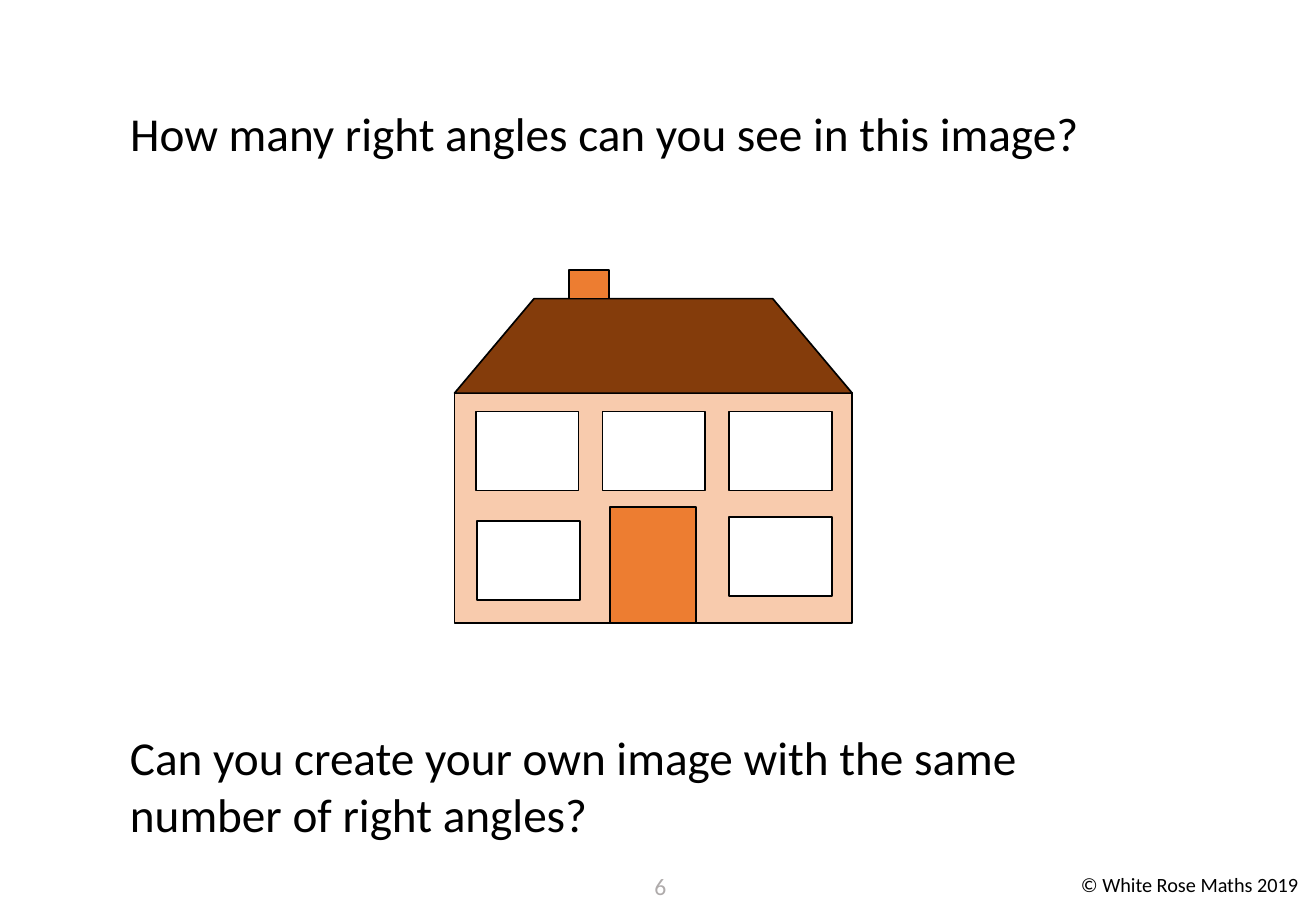
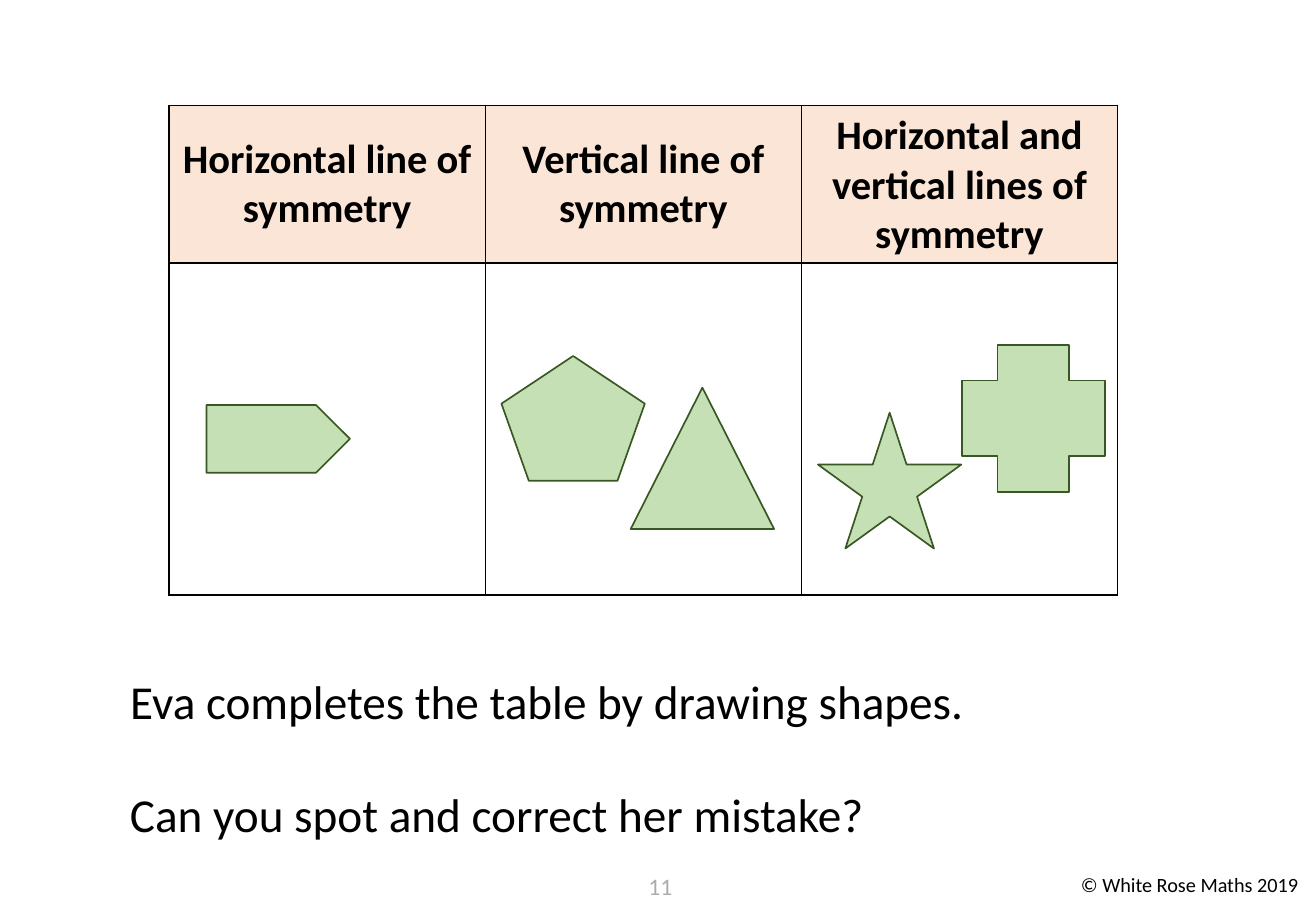
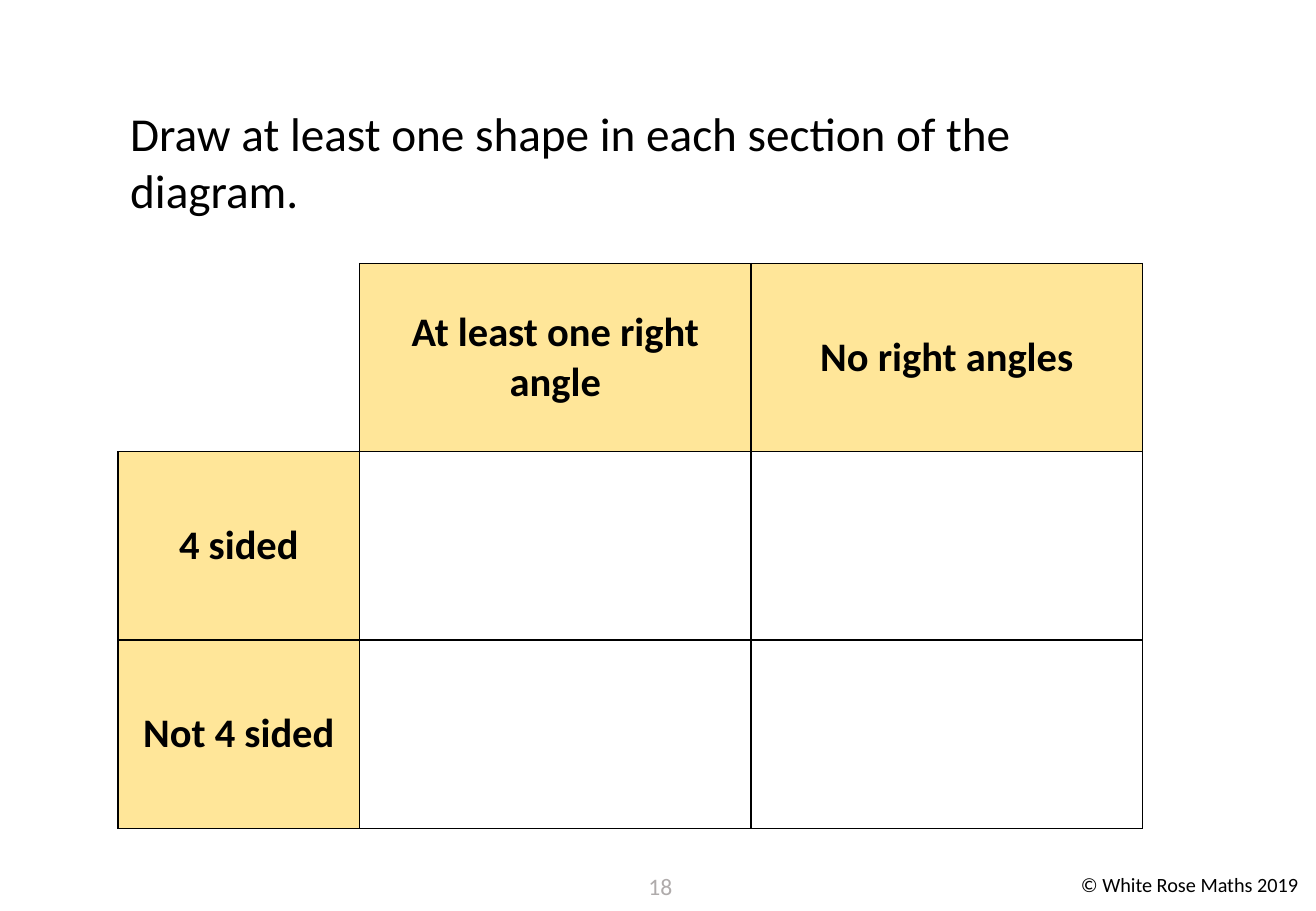
from lxml import etree
from pptx import Presentation
from pptx.dml.color import RGBColor
from pptx.enum import shapes, text
from pptx.oxml import ns
from pptx.util import Pt

COLOURS = {
    "ink": "000000", "paper": "FFFFFF", "number": "AFABAB",
    "wall": "F8CBAD", "roof": "843C0B", "brick": "ED7D31",
    "leaf": "C5E0B4", "leaf_edge": "385723",
    "peach": "FBE5D6", "yellow": "FFE699",
}
FONT = "Calibri"
PLAIN_TABLE = "{2D5ABB26-0587-4C30-8999-92F81FD0307C}"
SHAPE = shapes.MSO_SHAPE
ALIGN = text.PP_ALIGN
TEXT_LEFT, TEXT_TOP, TEXT_WIDTH, LINE_PITCH = 70, 58.3, 634, 33.63


def colour(name):
    return RGBColor.from_string(COLOURS[name])


def points(*lengths):
    return [Pt(length) for length in lengths]


def write(frame, words, size, align=ALIGN.LEFT, ink="ink", bold=False):
    frame.text = words
    for paragraph in frame.paragraphs:
        paragraph.alignment = align
        font = paragraph.font
        font.name, font.size, font.bold = FONT, Pt(size), bold
        font.color.rgb = colour(ink)


def add_label(slide, words, box, size, **style):
    label = slide.shapes.add_textbox(*points(*box))
    label.text_frame.word_wrap = True
    write(label.text_frame, words, size, **style)
    return label


def prompt_box(line, line_count):
    return (TEXT_LEFT, TEXT_TOP + line * LINE_PITCH,
            TEXT_WIDTH, line_count * LINE_PITCH + 7.2)


def add_prompt(slide, words, line, line_count=1):
    add_label(slide, words, prompt_box(line, line_count), 28)


def add_slide(deck, number, title, line=0, line_count=1):
    slide = deck.slides.add_slide(deck.slide_layouts[5])
    heading = slide.shapes.title
    heading.left, heading.top, heading.width, heading.height = points(
        *prompt_box(line, line_count))
    frame = heading.text_frame
    frame.auto_size = text.MSO_AUTO_SIZE.NONE
    frame.vertical_anchor = text.MSO_ANCHOR.TOP
    write(frame, title, 28)
    add_label(slide, str(number), (373, 513.4, 36.7, 28.8), 14,
              align=ALIGN.CENTER, ink="number")
    return slide


def share_copyright(slide):
    notice = add_label(slide, "© White Rose Maths 2019", (633.6, 513.4, 146, 21.6), 12)
    slide.slide_layout.shapes.element.append(notice.element)


def add_figure(parent, preset, box, fill, edge="ink"):
    figure = parent.shapes.add_shape(preset, *points(*box))
    figure.shadow.inherit = False
    figure.fill.solid()
    figure.fill.fore_color.rgb = colour(fill)
    figure.line.color.rgb = colour(edge)
    figure.line.width = Pt(1)
    return figure


def set_borders(cell, sides):
    properties = cell._tc.get_or_add_tcPr()
    for side in sides:
        border = etree.SubElement(properties, ns.qn(f"a:ln{side}"), w=str(Pt(1)))
        fill = etree.SubElement(border, ns.qn("a:solidFill"))
        etree.SubElement(fill, ns.qn("a:srgbClr"), val=COLOURS["ink"])


def add_grid(slide, corner, widths, heights, rows, heading_fill):
    frame = slide.shapes.add_table(
        len(heights), len(widths), *points(*corner, sum(widths), sum(heights)))
    grid = frame.table
    grid.first_row = grid.horz_banding = False
    grid._tbl.tblPr.find(ns.qn("a:tableStyleId")).text = PLAIN_TABLE
    for column, width in zip(grid.columns, widths):
        column.width = Pt(width)
    for row, height in zip(grid.rows, heights):
        row.height = Pt(height)
    for r, row in enumerate(rows):
        for c, words in enumerate(row):
            cell = grid.cell(r, c)
            blank_corner = r == c == 0 and not words
            set_borders(cell, "RB" if blank_corner else "LRTB")
            cell.fill.solid()
            cell.fill.fore_color.rgb = colour(heading_fill if words else "paper")
            if words:
                cell.vertical_anchor = text.MSO_ANCHOR.MIDDLE
                write(cell.text_frame, words, 24, ALIGN.CENTER, bold=True)


def add_house(slide):
    house = slide.shapes.add_group_shape()
    left, width, eaves = 269.4, 235.7, 233
    add_figure(house, SHAPE.RECTANGLE, (left, eaves, width, 136.2), "wall")
    roof = add_figure(house, SHAPE.FLOWCHART_MANUAL_OPERATION,
                      (left, 177, width, eaves - 177), "roof")
    roof.rotation = 180
    add_figure(house, SHAPE.RECTANGLE, (361.4, 300.4, 51.2, 68.8), "brick")
    add_figure(house, SHAPE.RECTANGLE, (337.2, 160, 23.8, 17), "brick")
    upper = [(282.2 + 75 * column, 244) for column in range(3)]
    lower = [(282.8, 308.8), (432.2, 306.4)]
    for corner in upper + lower:
        add_figure(house, SHAPE.RECTANGLE, (*corner, 60.8, 46.8), "paper")


def add_symmetry_shapes(slide):
    for preset, left, top, height in (
        (SHAPE.PENTAGON, 122.4, 240.1, 40.1),
        (SHAPE.REGULAR_PENTAGON, 297.2, 211, 74),
        (SHAPE.ISOSCELES_TRIANGLE, 373.8, 229.8, 83.8),
        (SHAPE.STAR_5_POINT, 484.8, 244.6, 80.6),
        (SHAPE.CROSS, 570, 204.4, 87.2),
    ):
        add_figure(slide, preset, (left, top, 85, height), "leaf", "leaf_edge")


def main():
    deck = Presentation()
    deck.slide_width, deck.slide_height = points(780, 540)

    slide = add_slide(deck, 6, "How many right angles can you see in this image?")
    share_copyright(slide)
    add_prompt(slide, "Can you create your own image with the same number of right angles?",
               line=11, line_count=2)
    add_house(slide)

    slide = add_slide(deck, 11, "Eva completes the table by drawing shapes.", line=10)
    add_prompt(slide, "Can you spot and correct her mistake?", line=12)
    add_grid(slide, (100.2, 62.4), [187.4] * 3, [93.6, 196.6], [
        ["Horizontal line of symmetry", "Vertical line of symmetry",
         "Horizontal and vertical lines of symmetry"],
        ["", "", ""],
    ], "peach")
    add_symmetry_shapes(slide)

    slide = add_slide(deck, 18, "Draw at least one shape in each section of the diagram.",
                      line_count=2)
    add_grid(slide, (70, 156.2), [143.2, 232, 232], [111.6] * 3, [
        ["", "At least one right angle", "No right angles"],
        ["4 sided", "", ""],
        ["Not 4 sided", "", ""],
    ], "yellow")

    deck.save("out.pptx")


if __name__ == "__main__":
    main()
